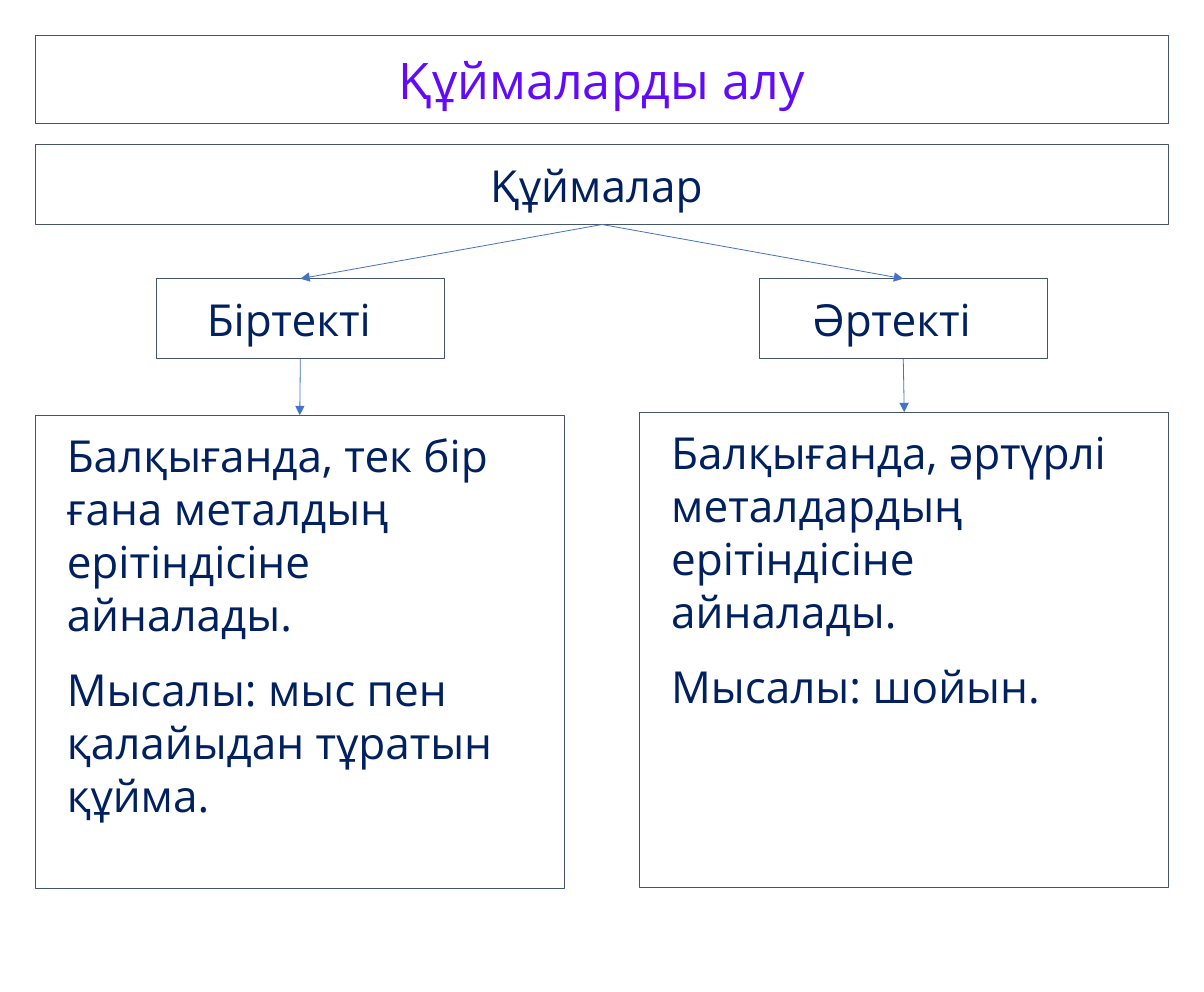
import pptx
import pptx.dml.color
import pptx.enum.shapes
import pptx.enum.text
import pptx.oxml.ns
import pptx.util
from lxml import etree

Pt = pptx.util.Pt
qn = pptx.oxml.ns.qn
ALIGN = pptx.enum.text.PP_ALIGN
ANCHOR = pptx.enum.text.MSO_ANCHOR

TOP, BOTTOM = 0, 2  # connection sites of a rectangle
NAVY, VIOLET, SLATE, BLUE = "002060", "620BFC", "44546A", "4472C4"
MARGIN, FULL_WIDTH = 22.4, 720
KIND_TOP, KIND_WIDTH, LABEL_HEIGHT = 177, 182.9, 50.9
DETAIL_WIDTH = 336

# kind, kind left, detail left, detail top, detail height, detail paragraphs
BRANCHES = [
    ("Біртекті", 99.3, MARGIN, 263.7, 300.8,
     ["Балқығанда, тек бір ғана металдың ерітіндісіне айналады.",
      "Мысалы: мыс пен қалайыдан тұратын құйма."]),
    ("Әртекті", 482.2, 406.3, 261.8, 301.7,
     ["Балқығанда, әртүрлі металдардың ерітіндісіне айналады.",
      "Мысалы: шойын."]),
]


def color(code):
    return pptx.dml.color.RGBColor.from_string(code)


def apply(target, values):
    for name, value in values.items():
        setattr(target, name, value)


def place(box, left, top, width, height):
    apply(box, {"left": Pt(left), "top": Pt(top),
                "width": Pt(width), "height": Pt(height)})


def outline(box):
    box.fill.background()
    box.line.color.rgb = color(SLATE)
    box.line.width = Pt(0.75)


def write(box, lines, size=28, ink=NAVY, align=ALIGN.CENTER,
          anchor=ANCHOR.MIDDLE, right=20):
    frame = box.text_frame
    apply(frame, {"word_wrap": True, "auto_size": pptx.enum.text.MSO_AUTO_SIZE.NONE,
                  "vertical_anchor": anchor, "margin_left": Pt(20), "margin_right": Pt(right),
                  "margin_top": Pt(8.5), "margin_bottom": Pt(8.5)})
    for index, line in enumerate(lines):
        para = frame.paragraphs[0] if index == 0 else frame.add_paragraph()
        apply(para, {"alignment": align, "line_spacing": 1.0,
                     "space_before": Pt(size / 2 if index else 0), "space_after": Pt(0)})
        span = para.add_run()
        span.text = line
        apply(span.font, {"name": "Open Sans", "size": Pt(size)})
        span.font.color.rgb = color(ink)


def remove_bullets(box):
    for para in box.text_frame.paragraphs:
        properties = para._p.get_or_add_pPr()
        properties.set("marL", "0")
        properties.set("indent", "0")
        etree.SubElement(properties, qn("a:buNone"))


def add_label(page, text, left, top, width, right):
    """Add a one-line box; a wider right inset moves its text left of centre."""
    box = page.shapes.add_shape(pptx.enum.shapes.MSO_SHAPE.RECTANGLE,
                                Pt(left), Pt(top), Pt(width), Pt(LABEL_HEIGHT))
    box.shadow.inherit = False
    outline(box)
    write(box, [text], right=right)
    return box


def fill_detail(box, lines, left, top, height):
    place(box, left, top, DETAIL_WIDTH, height)
    outline(box)
    write(box, lines, align=ALIGN.LEFT, anchor=ANCHOR.TOP)
    remove_bullets(box)


def add_arrow(page, start, end):
    """Join the bottom of one box to the top of another."""
    arrow = page.shapes.add_connector(pptx.enum.shapes.MSO_CONNECTOR.STRAIGHT, 0, 0, 0, 0)
    arrow.begin_connect(start, BOTTOM)
    arrow.end_connect(end, TOP)
    arrow.line.color.rgb = color(BLUE)
    arrow.line.width = Pt(0.5)
    etree.SubElement(arrow.line._get_or_add_ln(), qn("a:tailEnd"), type="triangle")
    etree.SubElement(arrow._element.spPr, qn("a:effectLst"))


def main():
    deck = pptx.Presentation()
    apply(deck, {"slide_width": Pt(764.64), "slide_height": Pt(630)})
    page = deck.slides.add_slide(deck.slide_layouts.get_by_name("Two Content"))
    title, *details = page.placeholders

    place(title, MARGIN, 22.7, FULL_WIDTH, 56)
    outline(title)
    write(title, ["Құймаларды алу"], size=32, ink=VIOLET)

    alloys = add_label(page, "Құймалар", MARGIN, 91.7, FULL_WIDTH, 27.3)
    for detail, branch in zip(details, BRANCHES):
        name, kind_left, left, top, height, lines = branch
        kind = add_label(page, name, kind_left, KIND_TOP, KIND_WIDTH, 34.6)
        fill_detail(detail, lines, left, top, height)
        add_arrow(page, alloys, kind)
        add_arrow(page, kind, detail)

    deck.save("out.pptx")


if __name__ == "__main__":
    main()
